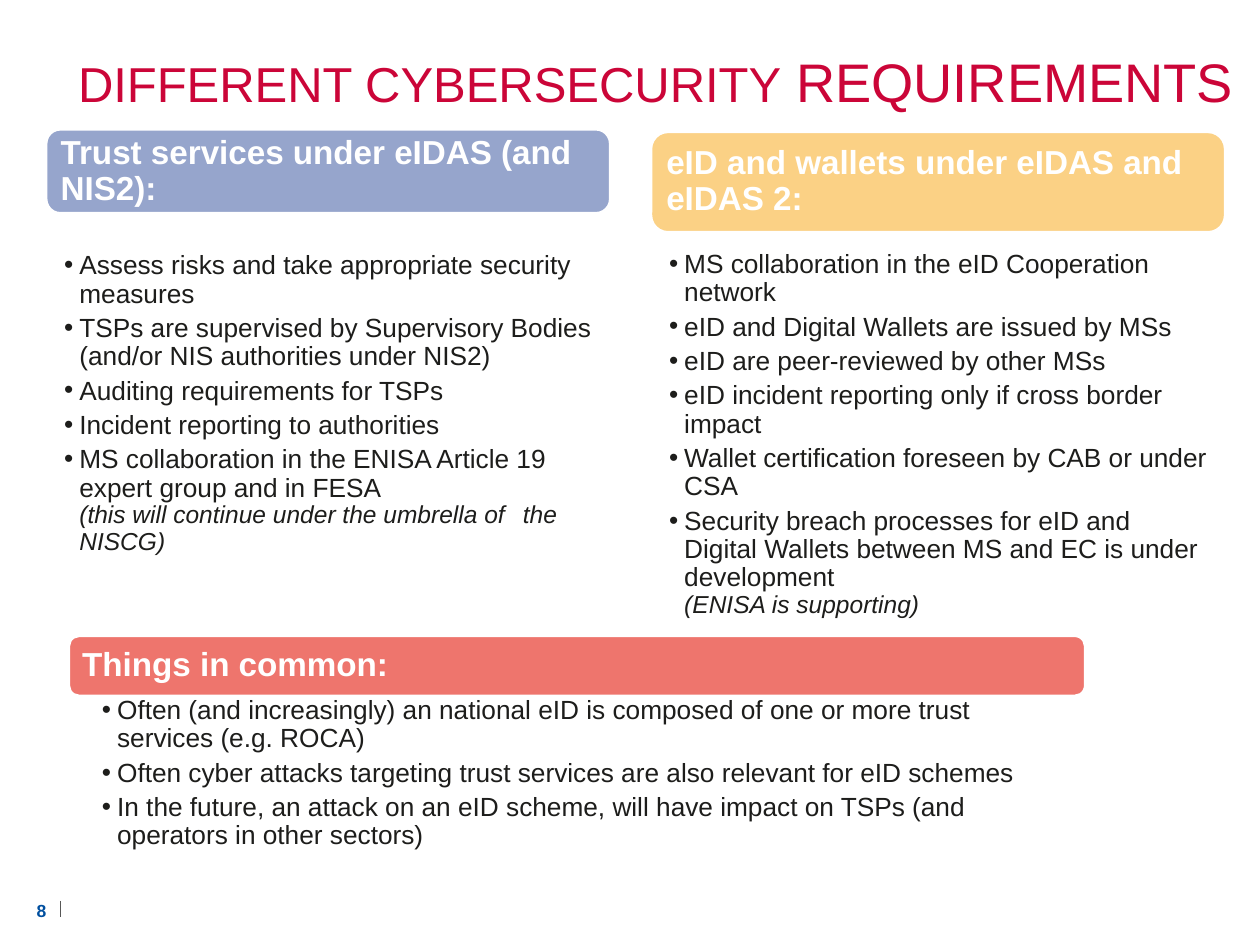
import pptx
import pptx.dml.color
import pptx.enum.shapes
import pptx.enum.text
import pptx.util
from dataclasses import dataclass
from lxml import etree
from pptx.oxml.ns import qn

Inches = pptx.util.Inches
Pt = pptx.util.Pt
Anchor = pptx.enum.text.MSO_ANCHOR


@dataclass(frozen=True)
class Theme:
    font: str = "Arial"
    title: str = "CB0538"
    body: str = "1D1D1B"
    white: str = "FFFFFF"
    number: str = "004F9F"
    rule: str = "575756"
    trust: str = "96A5CC"
    wallet: str = "FBD185"
    common: str = "EE756D"
    title_size: int = 28
    title_large: int = 31
    header_size: int = 19
    body_size: int = 15
    note_size: int = 14
    number_size: int = 10


THEME = Theme()

TRUST_POINTS = [
    ("Assess risks and take appropriate security measures",),
    ("TSPs are supervised by Supervisory Bodies (and/or NIS authorities under NIS2)",),
    ("Auditing requirements for TSPs",),
    ("Incident reporting to authorities",),
    ("MS collaboration in the ENISA Article 19 expert group and in FESA",
     "(this will continue under the umbrella of \tthe NISCG)"),
]
WALLET_POINTS = [
    ("MS collaboration in the eID Cooperation network",),
    ("eID and Digital Wallets are issued by MSs",),
    ("eID are peer-reviewed by other MSs",),
    ("eID incident reporting only if cross border impact",),
    ("Wallet certification foreseen by CAB or under CSA",),
    ("Security breach processes for eID and Digital Wallets between MS and EC "
     "is under development", "(ENISA is supporting)"),
]
COMMON_POINTS = [
    ("Often (and increasingly) an national eID is composed of one or more trust "
     "services (e.g. ROCA)",),
    ("Often cyber attacks targeting trust services are also relevant for eID schemes",),
    ("In the future, an attack on an eID scheme, will have impact on TSPs (and "
     "operators in other sectors)",),
]


def rgb(value):
    return pptx.dml.color.RGBColor.from_string(value)


def set_frame(frame, insets, anchor=Anchor.TOP):
    """Wrap the text and set left, top, right and bottom insets in inches."""
    frame.word_wrap = True
    frame.vertical_anchor = anchor
    (frame.margin_left, frame.margin_top,
     frame.margin_right, frame.margin_bottom) = map(Inches, insets)


def add_span(para, text, size, color, bold=False, italic=False):
    span = para.add_run()
    span.text = text
    span.font.name = THEME.font
    span.font.size = Pt(size)
    span.font.color.rgb = rgb(color)
    span.font.bold = bold
    span.font.italic = italic


def add_text_box(page, place, insets, anchor=Anchor.TOP):
    box = page.shapes.add_textbox(*map(Inches, place))
    set_frame(box.text_frame, insets, anchor)
    return box.text_frame


def add_title(page):
    para = add_text_box(page, (-0.09, 0.43, 10.87, 0.95), (0.71, 0, 0.75, 0)).paragraphs[0]
    para.line_spacing = Pt(34)
    add_span(para, "DIFFERENT CYBERSECURITY", THEME.title_size, THEME.title)
    add_span(para, " REQUIREMENTS", THEME.title_large, THEME.title)


def add_header(page, place, text, fill):
    box = page.shapes.add_shape(
        pptx.enum.shapes.MSO_SHAPE.ROUNDED_RECTANGLE, *map(Inches, place))
    box.shadow.inherit = False
    box.fill.solid()
    box.fill.fore_color.rgb = rgb(fill)
    box.line.color.rgb = rgb(THEME.white)
    box.line.width = Pt(1)
    set_frame(box.text_frame, (0.08, 0.08, 0.08, 0.08), Anchor.MIDDLE)
    para = box.text_frame.paragraphs[0]
    para.alignment = pptx.enum.text.PP_ALIGN.LEFT
    para.line_spacing = 0.9
    add_span(para, text, THEME.header_size, THEME.white, bold=True)


def set_bullet(para):
    """Give a hanging bullet, and a tab stop for the aside in a note."""
    props = para._p.get_or_add_pPr()
    props.set("marL", str(Inches(0.12)))
    props.set("indent", str(-Inches(0.12)))
    etree.SubElement(props, qn("a:buFont"), typeface=THEME.font)
    etree.SubElement(props, qn("a:buChar"), char="•")
    tabs = etree.SubElement(props, qn("a:tabLst"))
    etree.SubElement(tabs, qn("a:tab"), pos=str(Inches(3.64)), algn="l")


def add_bullets(page, place, points, left_inset=0.14):
    """Add bulleted points; a second item in a point is an italic note below it."""
    frame = add_text_box(page, place, (left_inset, 0.02, 0.12, 0.02))
    for index, (text, *notes) in enumerate(points):
        para = frame.add_paragraph() if index else frame.paragraphs[0]
        set_bullet(para)
        para.line_spacing = 0.9
        para.space_after = Pt(3.4)
        add_span(para, text, THEME.body_size, THEME.body)
        for note in notes:
            para.add_line_break()
            add_span(para, note, THEME.note_size, THEME.body, italic=True)


def add_page_number(page):
    para = add_text_box(page, (0.2, 7.1, 0.26, 0.4), (0, 0, 0, 0.21),
                        Anchor.BOTTOM).paragraphs[0]
    para.alignment = pptx.enum.text.PP_ALIGN.CENTER
    add_span(para, "8", THEME.number_size, THEME.number, bold=True)
    rule = page.shapes.add_connector(
        pptx.enum.shapes.MSO_CONNECTOR.STRAIGHT,
        *map(Inches, (0.48, 7.15, 0.48, 7.28)))
    rule.line.color.rgb = rgb(THEME.rule)
    rule.line.width = Pt(1)
    etree.SubElement(rule._element.spPr, qn("a:effectLst"))


def main():
    deck = pptx.Presentation()
    deck.slide_width, deck.slide_height = Inches(10), Inches(7.5)
    page = deck.slides.add_slide(deck.slide_layouts[6])
    add_page_number(page)
    add_title(page)
    add_header(page, (0.37, 1.03, 4.47, 0.66),
               "Trust services under eIDAS (and NIS2):", THEME.trust)
    add_bullets(page, (0.37, 1.98, 4.47, 2.78), TRUST_POINTS)
    add_header(page, (5.17, 1.05, 4.55, 0.79),
               "eID and wallets under eIDAS and eIDAS 2:", THEME.wallet)
    add_bullets(page, (5.17, 1.97, 4.55, 2.94), WALLET_POINTS)
    add_header(page, (0.55, 5.05, 8.06, 0.47), "Things in common:", THEME.common)
    add_bullets(page, (0.55, 5.51, 8.06, 1.17), COMMON_POINTS, left_inset=0.26)
    deck.save("out.pptx")


if __name__ == "__main__":
    main()
